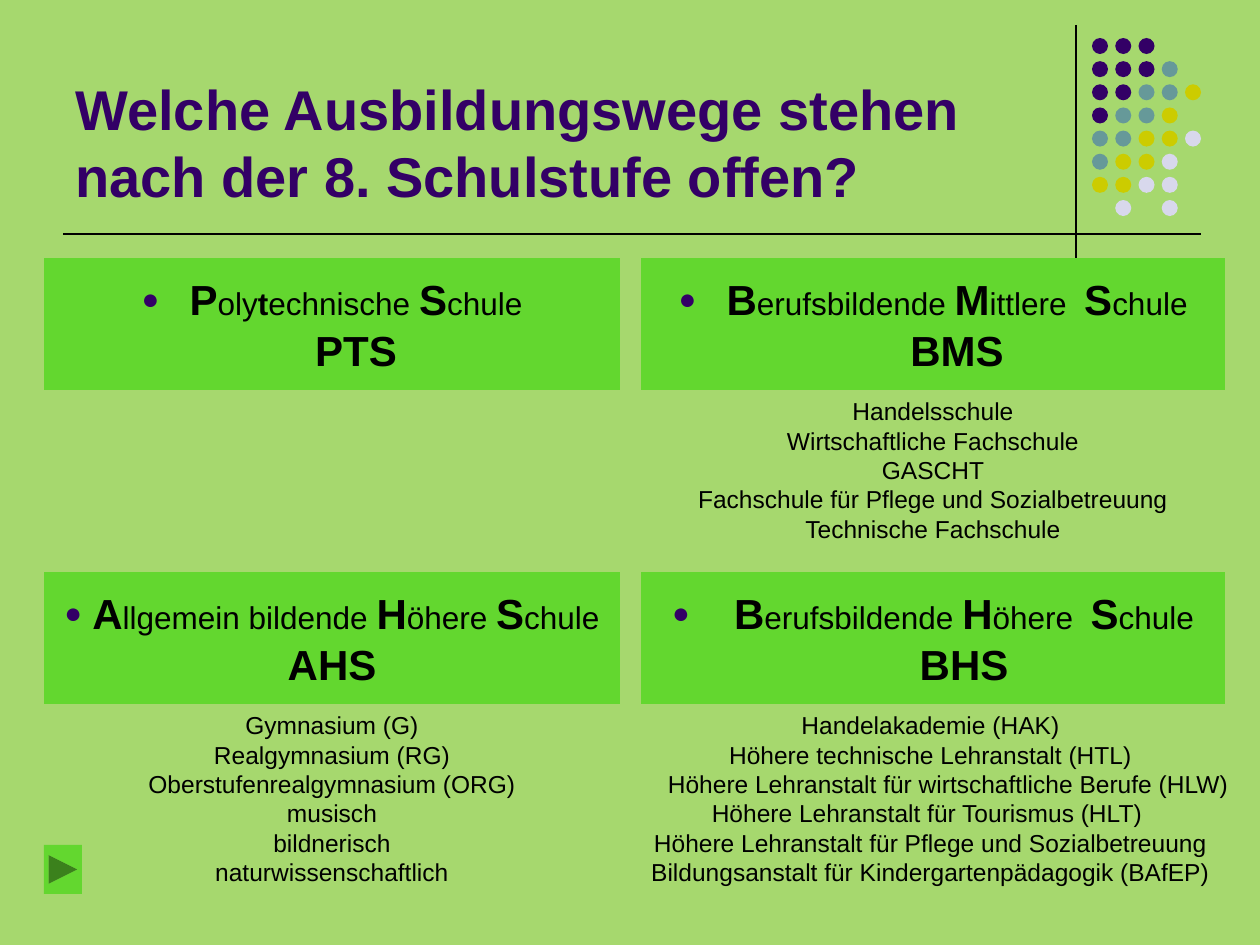
from lxml import etree
from pptx import Presentation
from pptx import util as u
from pptx.dml.color import RGBColor
from pptx.enum import shapes, text
from pptx.oxml.ns import qn

PX = 914400 / 126
SHAPE = shapes.MSO_SHAPE
ALIGN = text.PP_ALIGN
ANCHOR = text.MSO_ANCHOR
PURPLE, BLACK, GREEN = "330066", "000000", "63D72F"
DOT_COLORS = {"p": PURPLE, "t": "669999", "y": "CCCC00", "l": "D8D8EC"}
DOT_ROWS = ["ppp", "pppt", "pptty", "ptty", "ttyyl", "tyyl", "yyll", " l l"]


def px(n):
    return u.Emu(round(n * PX))


def color(value):
    return RGBColor.from_string(value)


def add_shape(s, kind, box, fill):
    sp = s.shapes.add_shape(kind, *map(px, box))
    sp.shadow.inherit = False
    sp.fill.solid()
    sp.fill.fore_color.rgb = color(fill)
    sp.line.fill.background()
    return sp


def add_line(s, x1, y1, x2, y2):
    line = s.shapes.add_connector(shapes.MSO_CONNECTOR.STRAIGHT, *map(px, (x1, y1, x2, y2)))
    line.line.color.rgb = color(BLACK)
    line.line.width = u.Pt(0.75)
    etree.SubElement(line._element.spPr, qn("a:effectLst"))


def add_run(p, words, size, bold=False, rgb=BLACK):
    r = p.add_run()
    r.text = words
    r.font.name = "Arial"
    r.font.size = u.Pt(size)
    r.font.bold = bold
    r.font.color.rgb = color(rgb)


def add_bullet(p, indent):
    pPr = p._p.get_or_add_pPr()
    pPr.set("marL", str(px(indent)))
    pPr.set("indent", str(-px(indent)))
    clr = etree.SubElement(pPr, qn("a:buClr"))
    etree.SubElement(clr, qn("a:srgbClr"), val=PURPLE)
    etree.SubElement(pPr, qn("a:buSzPct"), val="70000")
    etree.SubElement(pPr, qn("a:buFont"), typeface="Arial")
    etree.SubElement(pPr, qn("a:buChar"), char="●")


def text_frame(s, box):
    tf = s.shapes.add_textbox(*map(px, box)).text_frame
    tf.word_wrap = True
    return tf


def title(s, box):
    tf = text_frame(s, box)
    tf.vertical_anchor = ANCHOR.BOTTOM
    add_run(tf.paragraphs[0], "Welche Ausbildungswege stehen nach der 8. Schulstufe offen?",
            32, True, PURPLE)


def dot_pattern(s, box):
    x, y, w, h = box
    d = 16
    step_x, step_y = (w - d) / 4, (h - d) / (len(DOT_ROWS) - 1)
    for row, keys in enumerate(DOT_ROWS):
        for col, key in enumerate(keys):
            if key != " ":
                add_shape(s, SHAPE.OVAL, (x + col * step_x, y + row * step_y, d, d),
                          DOT_COLORS[key])


def school_header(s, box, parts, short, indent):
    """Parts are (text, size, bold); the short name stands on a second line."""
    tf = add_shape(s, SHAPE.RECTANGLE, box, GREEN).text_frame
    tf.word_wrap = True
    tf.vertical_anchor = ANCHOR.MIDDLE
    p = tf.paragraphs[0]
    p.alignment = ALIGN.CENTER
    add_bullet(p, indent)
    for part in parts:
        add_run(p, *part)
    p.add_line_break()
    add_run(p, short, 24, True)


def school_list(s, box, lines, right=()):
    """One centred paragraph a line; indexes in right are aligned right."""
    tf = text_frame(s, box)
    for i, line in enumerate(lines):
        p = tf.add_paragraph() if i else tf.paragraphs[0]
        p.alignment = ALIGN.RIGHT if i in right else ALIGN.CENTER
        add_run(p, line, 14)


def big(words):
    return words, 24, True


def small(words, bold=False):
    return words, 18, bold


def main():
    prs = Presentation()
    prs.slide_width, prs.slide_height = px(1260), px(945)
    s = prs.slides.add_slide(prs.slide_layouts[6])
    s.background.fill.solid()
    s.background.fill.fore_color.rgb = color("A6D86E")

    # Frame lines, dots and title
    add_line(s, 1076, 25, 1076, 258)
    dot_pattern(s, (1092, 38, 109, 178))
    add_line(s, 63, 234, 1201, 234)
    title(s, (63, 16, 997, 199))

    # School types: two columns, two rows
    left, right, left_w, right_w = 44, 641, 576, 584
    top, bottom, head_h = 258, 572, 132
    school_header(s, (left, top, left_w, head_h),
                  [big("P"), small("oly"), small("t", True), small("echnische "),
                   big("S"), small("chule")], "PTS", 48)
    school_header(s, (right, top, right_w, head_h),
                  [big("B"), small("erufsbildende "), big("M"), small("ittlere  "),
                   big("S"), small("chule")], "BMS", 48)
    school_header(s, (left, bottom, left_w, head_h),
                  [big(" A"), small("llgemein bildende "), big("H"), small("öhere "),
                   big("S"), small("chule")], "AHS", 0)
    school_header(s, (right, bottom, right_w, head_h),
                  [big("B"), small("erufsbildende "), big("H"), small("öhere  "),
                   big("S"), small("chule")], "BHS", 62)

    # Schools of each type
    school_list(s, (right, top + head_h, right_w, 161),
                ["Handelsschule", "Wirtschaftliche Fachschule", "GASCHT",
                 "Fachschule für Pflege und Sozialbetreuung", "Technische Fachschule"])
    school_list(s, (left, bottom + head_h, left_w, 189),
                ["Gymnasium (G)", "Realgymnasium (RG)", "Oberstufenrealgymnasium (ORG)",
                 "musisch", "bildnerisch", "naturwissenschaftlich"])
    school_list(s, (620, bottom + head_h, 621, 190),
                ["Handelakademie (HAK)", "Höhere technische Lehranstalt (HTL)",
                 "Höhere Lehranstalt für wirtschaftliche Berufe (HLW)",
                 "Höhere Lehranstalt für Tourismus (HLT) ",
                 "Höhere Lehranstalt für Pflege und Sozialbetreuung",
                 "Bildungsanstalt für Kindergartenpädagogik (BAfEP)"], right=(2,))

    # Forward button
    add_shape(s, SHAPE.ACTION_BUTTON_FORWARD_OR_NEXT, (left, 845, 38, 49), GREEN)

    prs.save("out.pptx")


if __name__ == "__main__":
    main()
